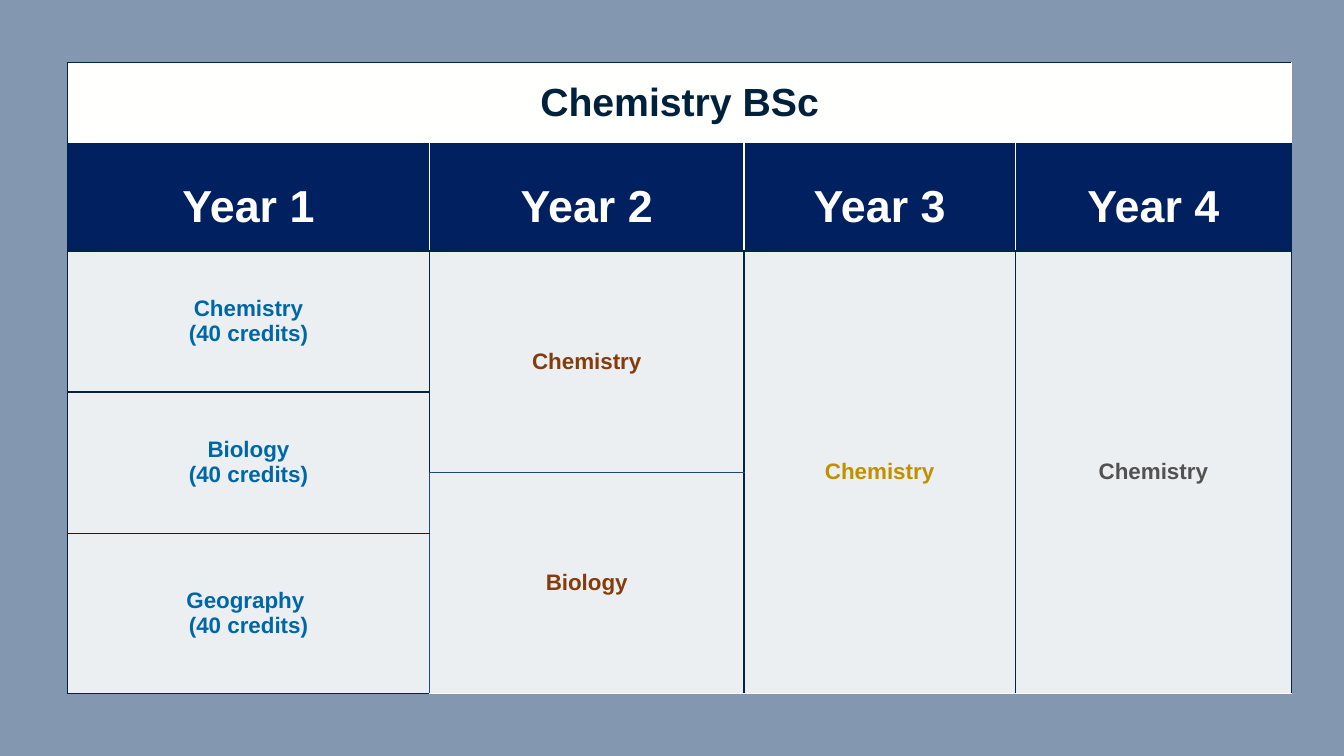
from dataclasses import dataclass, field

from lxml.etree import SubElement as Sub
from pptx import Presentation
from pptx.dml.color import RGBColor as RGB
from pptx.enum.text import MSO_ANCHOR as Anchor, PP_ALIGN as Align
from pptx.oxml.ns import qn
from pptx.table import Table, _Cell as Cell
from pptx.util import Inches, Pt


@dataclass(frozen=True)
class Theme:
    font: str = "Arial"
    back: str = "8497B0"
    white: str = "FFFFFE"
    ink: str = "00213B"
    navy: str = "002060"
    line: str = "002542"
    blue: str = "1F497D"
    years: tuple[str, ...] = ("0067A7", "843C0B", "BF9000", "525252")
    title: int = 28
    head: int = 32
    body: int = 16


@dataclass(frozen=True)
class Block:
    """A table cell with its span; edges lists sides unlike the default line."""
    row: int
    col: int
    text: str
    color: str
    size: int
    fill: str
    rows: int = 1
    cols: int = 1
    alpha: int = 100
    space: float = 1.0
    edges: dict[str, str] = field(default_factory=dict)


THEME = Theme()
WIDTHS = (3.59, 3.12, 2.69, 2.74)
HEIGHTS = (0.8, 1.07, 1.4, 0.8, 0.6, 1.59)


def head(col: int) -> Block:
    last = len(WIDTHS) - 1
    edges = {side: THEME.white for side, end in (("L", 0), ("R", last)) if col != end}
    return Block(1, col, f"Year {col + 1}", THEME.white, THEME.head, THEME.navy,
                 space=1.4, edges=edges)


def course(row: int, col: int, rows: int, text: str, blue: str = "") -> Block:
    return Block(row, col, text, THEME.years[col], THEME.body, THEME.white,
                 rows=rows, alpha=85, edges=dict.fromkeys(blue, THEME.blue))


BLOCKS = [
    Block(0, 0, "Chemistry BSc", THEME.ink, THEME.title, THEME.white, cols=4),
    *(head(col) for col in range(len(WIDTHS))),
    course(2, 0, 1, "Chemistry\n(40 credits)"),
    course(3, 0, 2, "Biology\n(40 credits)", "R"),
    course(5, 0, 1, "Geography \n(40 credits)", "R"),
    course(2, 1, 2, "Chemistry", "B"),
    course(4, 1, 2, "Biology", "LTB"),
    course(2, 2, 4, "Chemistry"),
    course(2, 3, 4, "Chemistry"),
]


def style(cell: Cell, block: Block, sides: str) -> None:
    """Draw the given sides, then the fill, which must follow them in the XML."""
    props = cell._tc.get_or_add_tcPr()
    for side in sides:
        line = Sub(props, qn(f"a:ln{side}"), w=str(Pt(1)))
        solid = Sub(line, qn("a:solidFill"))
        Sub(solid, qn("a:srgbClr"), val=block.edges.get(side, THEME.line))
    cell.fill.solid()
    cell.fill.fore_color.rgb = RGB.from_string(block.fill)
    if block.alpha < 100:
        color = props.find(qn("a:solidFill")).find(qn("a:srgbClr"))
        Sub(color, qn("a:alpha"), val=str(block.alpha * 1000))


def write(cell: Cell, block: Block) -> None:
    cell.vertical_anchor = Anchor.MIDDLE
    cell.margin_left = cell.margin_right = Inches(0.12)
    cell.margin_top = cell.margin_bottom = Inches(0.06)
    cell.text = block.text
    for para in cell.text_frame.paragraphs:
        para.alignment = Align.CENTER
        para.line_spacing = block.space
        font = para.font
        font.name, font.size, font.bold = THEME.font, Pt(block.size), True
        font.color.rgb = RGB.from_string(block.color)


def place(table: Table, block: Block) -> None:
    low, right = block.row + block.rows - 1, block.col + block.cols - 1
    first = table.cell(block.row, block.col)
    if block.rows * block.cols > 1:
        first.merge(table.cell(low, right))
    for row in range(block.row, low + 1):
        for col in range(block.col, right + 1):
            outer = {"L": col == block.col, "R": col == right,
                     "T": row == block.row, "B": row == low}
            style(table.cell(row, col), block,
                  "".join(side for side, edge in outer.items() if edge))
    write(first, block)


def main() -> None:
    deck = Presentation()
    deck.slide_width, deck.slide_height = Inches(13.33), Inches(7.5)
    slide = deck.slides.add_slide(deck.slide_layouts[6])
    slide.background.fill.solid()
    slide.background.fill.fore_color.rgb = RGB.from_string(THEME.back)

    # Course table
    table = slide.shapes.add_table(
        len(HEIGHTS), len(WIDTHS), Inches(0.67), Inches(0.62),
        Inches(sum(WIDTHS)), Inches(sum(HEIGHTS))).table
    table.first_row = table.horz_banding = False
    for column, width in zip(table.columns, WIDTHS):
        column.width = Inches(width)
    for row, height in zip(table.rows, HEIGHTS):
        row.height = Inches(height)
    for block in BLOCKS:
        place(table, block)

    deck.save("out.pptx")


if __name__ == "__main__":
    main()
